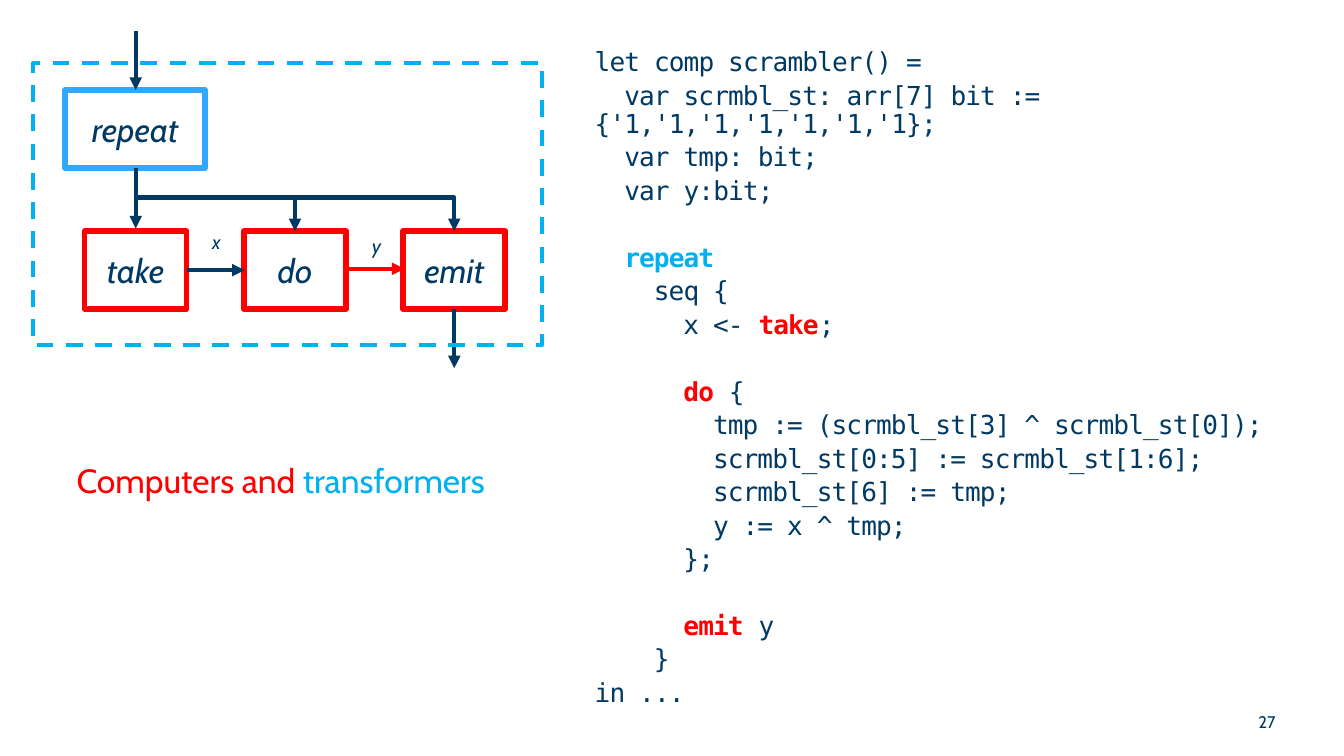
from dataclasses import dataclass

from lxml import etree
from pptx import Presentation
from pptx import util as u
from pptx.dml.color import RGBColor
from pptx.enum import dml, shapes, text
from pptx.oxml import ns

PX = 4572  # EMU per px, 200 px to the inch


@dataclass(frozen=True)
class Theme:
    ink: str = "003963"
    red: str = "FF0000"
    sky: str = "00B0F0"
    blue: str = "31A7FE"
    white: str = "FFFFFF"
    sans: str = "Cabin"
    mono: str = "DejaVu Sans Mono"
    large: float = 18
    code: float = 14
    label: float = 10.5
    small: float = 9
    frame: float = 3
    wire: float = 2.25


def px(*lengths):
    return [u.Emu(length * PX) for length in lengths]


def write(paragraph, words, *, font, size, color, bold=False, italic=False, spacing=0):
    run = paragraph.add_run()
    run.text = words
    run.font.name, run.font.size = font, u.Pt(size)
    run.font.bold, run.font.italic = bold, italic
    run.font.color.rgb = RGBColor.from_string(color)
    if spacing:
        run.font._element.set("spc", str(int(spacing * 100)))


class Deck:
    def __init__(self, width, height, theme):
        self.theme = theme
        self.file = Presentation()
        self.file.slide_width, self.file.slide_height = px(width, height)
        self.slide = self.file.slides.add_slide(self.file.slide_layouts[1])
        title = self.slide.shapes.title._element
        title.getparent().remove(title)

    def stroke(self, line, color, width):
        line.color.rgb = RGBColor.from_string(color)
        line.width = u.Pt(width)

    def box(self, left, top, width, height, color, line_width, words="", dashed=False):
        rect = self.slide.shapes.add_shape(
            shapes.MSO_SHAPE.RECTANGLE, *px(left, top, width, height))
        rect.shadow.inherit = False
        self.stroke(rect.line, color, line_width)
        if dashed:
            rect.fill.background()
            rect.line.dash_style = dml.MSO_LINE.DASH
        else:
            rect.fill.solid()
            rect.fill.fore_color.rgb = RGBColor.from_string(self.theme.white)
        if words:
            frame = rect.text_frame
            frame.word_wrap = False
            frame.vertical_anchor = text.MSO_ANCHOR.MIDDLE
            frame.paragraphs[0].alignment = text.PP_ALIGN.CENTER
            write(frame.paragraphs[0], words, font=self.theme.sans,
                  size=self.theme.large, color=self.theme.ink, italic=True)

    def arrow(self, x1, y1, x2, y2, color=None, bent=False):
        kind = shapes.MSO_CONNECTOR.ELBOW if bent else shapes.MSO_CONNECTOR.STRAIGHT
        wire = self.slide.shapes.add_connector(kind, *px(x1, y1, x2, y2))
        self.stroke(wire.line, color or self.theme.ink, self.theme.wire)
        properties = wire._element.spPr
        if bent:
            properties.find(ns.qn("a:prstGeom")).set("prst", "bentConnector2")
        etree.SubElement(wire.line._ln, ns.qn("a:tailEnd"), type="triangle")
        etree.SubElement(properties, ns.qn("a:effectLst"))

    def caption(self, left, top, width, height, runs, size, align=text.PP_ALIGN.LEFT,
                margins=(0, 0), anchor=text.MSO_ANCHOR.TOP, wrap=True, italic=False):
        frame = self.slide.shapes.add_textbox(*px(left, top, width, height)).text_frame
        frame.word_wrap, frame.vertical_anchor = wrap, anchor
        frame.margin_left = frame.margin_right = px(margins[0])[0]
        frame.margin_top = frame.margin_bottom = px(margins[1])[0]
        frame.paragraphs[0].alignment = align
        for words, color in runs:
            write(frame.paragraphs[0], words, font=self.theme.sans, size=size,
                  color=color, italic=italic)

    def code(self, left, top, width, height, lines, indent, before, gap):
        body = self.slide.placeholders[1]
        body.left, body.top, body.width, body.height = px(left, top, width, height)
        frame = body.text_frame
        frame.word_wrap, frame.auto_size = True, text.MSO_AUTO_SIZE.NONE
        frame.vertical_anchor = text.MSO_ANCHOR.TOP
        frame.margin_left = frame.margin_right = 0
        frame.margin_top = frame.margin_bottom = 0
        for number, (level, opens_block, runs) in enumerate(lines):
            paragraph = frame.add_paragraph() if number else frame.paragraphs[0]
            paragraph.line_spacing = 0.9
            paragraph.space_before = u.Pt(gap if opens_block else before)
            layout = paragraph._p.get_or_add_pPr()
            layout.set("marL", "0")
            layout.set("indent", str(level * indent * PX))
            etree.SubElement(layout, ns.qn("a:buNone"))
            for words, color in runs:
                write(paragraph, words, font=self.theme.mono, size=self.theme.code,
                      color=color, bold=color != self.theme.ink, spacing=-0.5)


def main():
    theme = Theme()
    ink, red, sky = theme.ink, theme.red, theme.sky
    deck = Deck(2000, 1125, theme)

    # Program: indent level, whether a gap precedes, coloured runs
    program = [
        (0, False, [("let comp scrambler() =", ink)]),
        (1, False, [("var scrmbl_st: arr[7] bit := {'1,'1,'1,'1,'1,'1,'1};", ink)]),
        (1, False, [("var tmp: bit;", ink)]),
        (1, False, [("var y:bit;", ink)]),
        (1, True, [("repeat", sky)]),
        (2, False, [("seq {", ink)]),
        (3, False, [("x <- ", ink), ("take", red), (";", ink)]),
        (3, True, [("do", red), (" {", ink)]),
        (4, False, [("tmp := (scrmbl_st[3] ^ scrmbl_st[0]);", ink)]),
        (4, False, [("scrmbl_st[0:5] := scrmbl_st[1:6];", ink)]),
        (4, False, [("scrmbl_st[6] := tmp;", ink)]),
        (4, False, [("y := x ^ tmp;", ink)]),
        (3, False, [("};", ink)]),
        (3, True, [("emit", red), (" y", ink)]),
        (2, False, [("}", ink)]),
        (0, False, [("in ...", ink)]),
    ]
    deck.code(885, 73, 1088, 1028, program, indent=44, before=2.8, gap=20.7)

    # Slide number
    deck.caption(1564, 1052, 350, 44, [("27", ink)], theme.small, text.PP_ALIGN.RIGHT,
                 margins=(16, 8), anchor=text.MSO_ANCHOR.MIDDLE)

    # Blocks: the repeat box above an evenly spaced row of stages
    stage_left, stage_top, stage_width, box_height, pitch = 126, 344, 152, 116, 237
    deck.box(97, 134, 208, box_height, theme.blue, theme.frame, "repeat")
    for column, stage in enumerate(("take", "do", "emit")):
        deck.box(stage_left + column * pitch, stage_top, stage_width, box_height,
                 red, theme.frame, stage)

    # Control flow
    take_x, do_x, emit_x = (stage_left + stage_width // 2 + n * pitch for n in range(3))
    bus_y = 294
    deck.arrow(take_x, 46, take_x, 134)
    deck.arrow(take_x, 250, take_x, 340)
    deck.arrow(take_x, bus_y, emit_x, stage_top, bent=True)
    deck.arrow(do_x, bus_y, do_x, stage_top)
    deck.arrow(emit_x, stage_top + box_height, emit_x, 548)

    # Data flow between stages
    deck.arrow(278, 402, 364, 402)
    deck.arrow(516, 400, 602, 400, red)
    for name, left, top in (("x", 296, 332), ("y", 534, 338)):
        deck.caption(left, top, 54, 56, [(name, ink)], theme.label,
                     margins=(20, 10), wrap=False, italic=True)

    # Heading and outline of the whole component
    deck.caption(114, 685, 718, 60, [("Computers and ", red), ("transformers", sky)],
                 theme.large)
    deck.box(49, 94, 758, 419, sky, theme.wire, dashed=True)

    deck.file.save("out.pptx")


if __name__ == "__main__":
    main()
